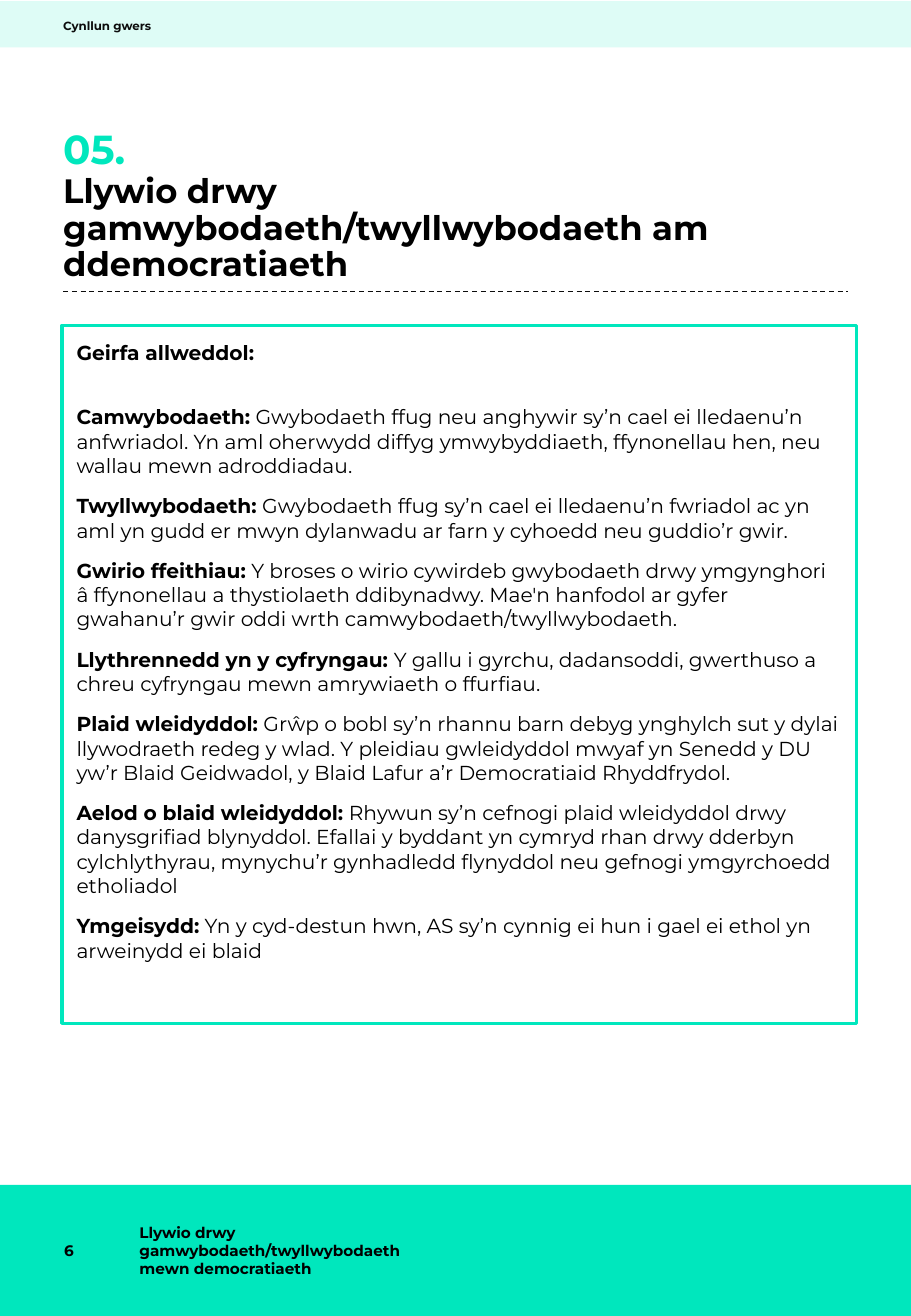
from lxml.etree import SubElement
from pptx import Presentation
from pptx.dml.color import RGBColor
from pptx.enum.dml import MSO_LINE
from pptx.enum.shapes import MSO_CONNECTOR, MSO_SHAPE
from pptx.enum.text import MSO_ANCHOR as Anchor, MSO_AUTO_SIZE as AutoSize, PP_ALIGN as Align
from pptx.oxml.ns import qn
from pptx.util import Inches, Pt

FONT = "Montserrat"
MINT = RGBColor(0x00, 0xE7, 0xBD)
PALE_MINT = RGBColor(0xDE, 0xFC, 0xF6)
BLACK = RGBColor(0x00, 0x00, 0x00)
INK = RGBColor(0x0C, 0x0C, 0x0C)

PAGE_WIDTH, PAGE_HEIGHT = 7.5, 10.84
MARGIN, CONTENT_WIDTH = 0.52, 6.46

GLOSSARY = [
    ("Camwybodaeth:", "Gwybodaeth ffug neu anghywir sy’n cael ei lledaenu’n anfwriadol. Yn aml "
     "oherwydd diffyg ymwybyddiaeth, ffynonellau hen, neu wallau mewn adroddiadau."),
    ("Twyllwybodaeth:", "Gwybodaeth ffug sy’n cael ei lledaenu’n fwriadol ac yn aml yn gudd er mwyn "
     "dylanwadu ar farn y cyhoedd neu guddio’r gwir."),
    ("Gwirio ffeithiau:", "Y broses o wirio cywirdeb gwybodaeth drwy ymgynghori â ffynonellau a "
     "thystiolaeth ddibynadwy. Mae'n hanfodol ar gyfer gwahanu’r gwir oddi wrth "
     "camwybodaeth/twyllwybodaeth."),
    ("Llythrennedd yn y cyfryngau:", "Y gallu i gyrchu, dadansoddi, gwerthuso a chreu cyfryngau "
     "mewn amrywiaeth o ffurfiau."),
    ("Plaid wleidyddol:", "Grŵp o bobl sy’n rhannu barn debyg ynghylch sut y dylai llywodraeth redeg "
     "y wlad. Y pleidiau gwleidyddol mwyaf yn Senedd y DU yw’r Blaid Geidwadol, y Blaid Lafur a’r "
     "Democratiaid Rhyddfrydol."),
    ("Aelod o blaid wleidyddol:", "Rhywun sy’n cefnogi plaid wleidyddol drwy danysgrifiad blynyddol. "
     "Efallai y byddant yn cymryd rhan drwy dderbyn cylchlythyrau, mynychu’r gynhadledd flynyddol neu "
     "gefnogi ymgyrchoedd etholiadol"),
    ("Ymgeisydd:", "Yn y cyd-destun hwn, AS sy’n cynnig ei hun i gael ei ethol yn arweinydd ei blaid"),
]


def place(shape, left, top, width, height):
    shape.left, shape.top = Inches(left), Inches(top)
    shape.width, shape.height = Inches(width), Inches(height)


def set_frame(shape, inset_x=0, inset_y=0, anchor=Anchor.TOP):
    frame = shape.text_frame
    frame.word_wrap = True
    frame.auto_size = AutoSize.NONE
    frame.vertical_anchor = anchor
    frame.margin_left = frame.margin_right = Inches(inset_x)
    frame.margin_top = frame.margin_bottom = Inches(inset_y)
    return frame


def add_span(para, text, size, color=BLACK, bold=True):
    span = para.add_run()
    span.text = text
    font = span.font
    font.name, font.size, font.bold = FONT, Pt(size), bold
    font.color.rgb = color


def add_label(page, box, text, size, color=BLACK, inset_x=0, inset_y=0, anchor=Anchor.TOP):
    label = page.shapes.add_textbox(*map(Inches, box))
    frame = set_frame(label, inset_x, inset_y, anchor)
    add_span(frame.paragraphs[0], text, size, color)


def add_band(page, box, color):
    band = page.shapes.add_shape(MSO_SHAPE.RECTANGLE, *map(Inches, box))
    band.shadow.inherit = False
    band.fill.solid()
    band.fill.fore_color.rgb = color
    band.line.fill.background()


def add_header(page, left, top, width, height):
    add_band(page, (left, top, width, height), PALE_MINT)
    add_label(page, (left + MARGIN, top + 0.06, 2.7, 0.28), "Cynllun gwers", 7, INK,
              anchor=Anchor.MIDDLE)


def add_footer(page, left, top, width, height):
    add_band(page, (left, top, width, height), MINT)
    for offset, label_width, text in [
        (0.43, 0.62, "6"),
        (1.05, 2.77, "Llywio drwy gamwybodaeth/twyllwybodaeth mewn democratiaeth"),
    ]:
        add_label(page, (left + offset, top, label_width, height), text, 9,
                  inset_x=0.1, inset_y=0.05, anchor=Anchor.MIDDLE)


def add_heading(page, left, top, width, height):
    # Section number
    add_label(page, (left, top, width, 0.37), "05.", 24, MINT)

    # Title
    title = page.shapes.title
    place(title, left, top + 0.42, width, 0.88)
    para = set_frame(title).paragraphs[0]
    para.alignment = Align.LEFT
    para.line_spacing = 0.9
    add_span(para, "Llywio drwy gamwybodaeth/twyllwybodaeth am ddemocratiaeth", 20)

    # Dashed rule
    rule_y = Inches(top + height)
    rule = page.shapes.add_connector(MSO_CONNECTOR.STRAIGHT, Inches(left), rule_y,
                                     Inches(left + width), rule_y)
    rule.line.color.rgb = INK
    rule.line.width = Pt(0.75)
    rule.line.dash_style = MSO_LINE.DASH
    SubElement(rule._element.spPr, qn("a:effectLst"))


def format_glossary_para(para, space_before):
    properties = para._p.get_or_add_pPr()
    properties.set("marL", "0")
    properties.set("indent", "0")
    SubElement(properties, qn("a:buNone"))
    para.alignment = Align.LEFT
    para.space_before = Pt(space_before)


def add_glossary(page, left, top, width, height):
    panel = page.placeholders[1]
    place(panel, left, top, width, height)
    panel.line.color.rgb = MINT
    panel.line.width = Pt(2)
    frame = set_frame(panel, 0.12, 0.12)

    heading = frame.paragraphs[0]
    format_glossary_para(heading, 0)
    add_span(heading, "Geirfa allweddol:", 12)

    for index, (term, meaning) in enumerate(GLOSSARY):
        para = frame.add_paragraph()
        format_glossary_para(para, 9.5 if index else 24)
        add_span(para, term, 12)
        add_span(para, " " + meaning, 12, bold=False)


def main():
    deck = Presentation()
    deck.slide_width, deck.slide_height = Inches(PAGE_WIDTH), Inches(PAGE_HEIGHT)
    page = deck.slides.add_slide(deck.slide_layouts[1])
    add_footer(page, 0, 9.76, PAGE_WIDTH, 1.08)
    add_header(page, 0, 0.01, PAGE_WIDTH, 0.38)
    add_heading(page, MARGIN, 1.02, CONTENT_WIDTH, 1.38)
    add_glossary(page, 0.51, 2.68, 6.54, 5.75)
    deck.save("out.pptx")


if __name__ == "__main__":
    main()
